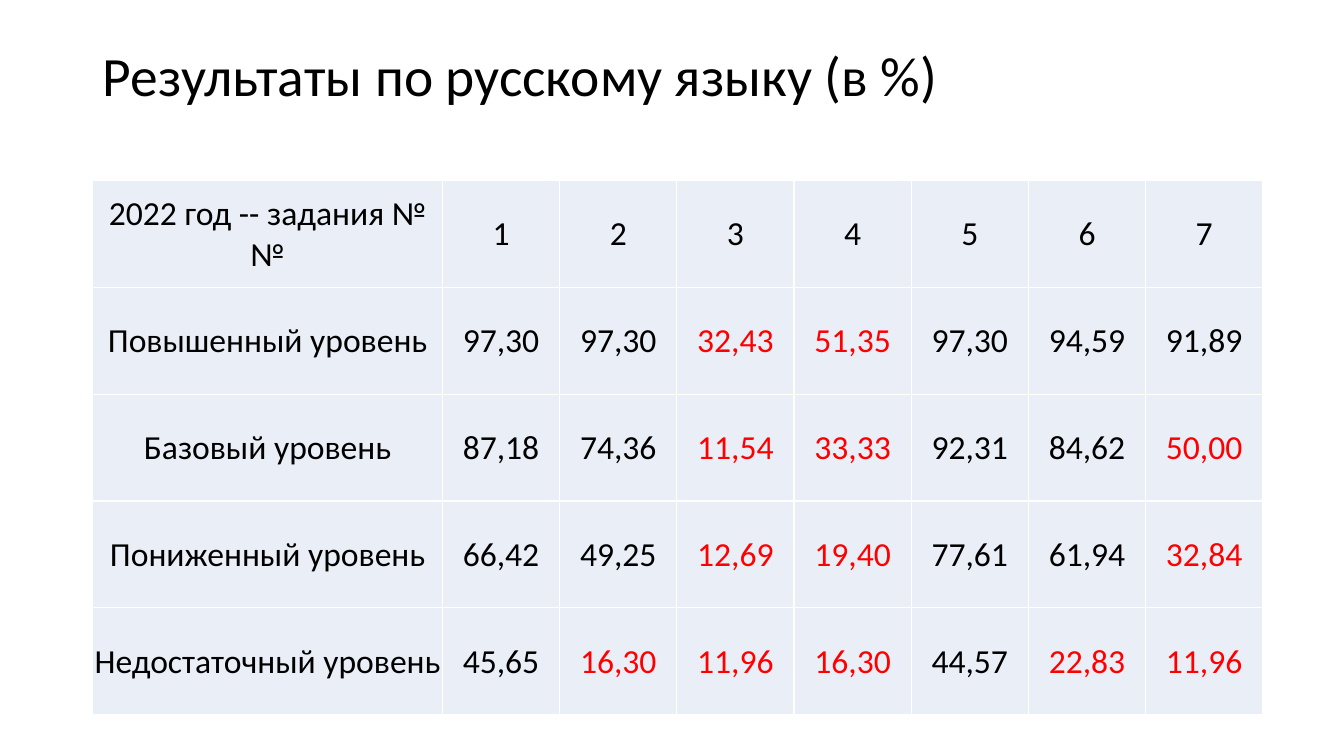
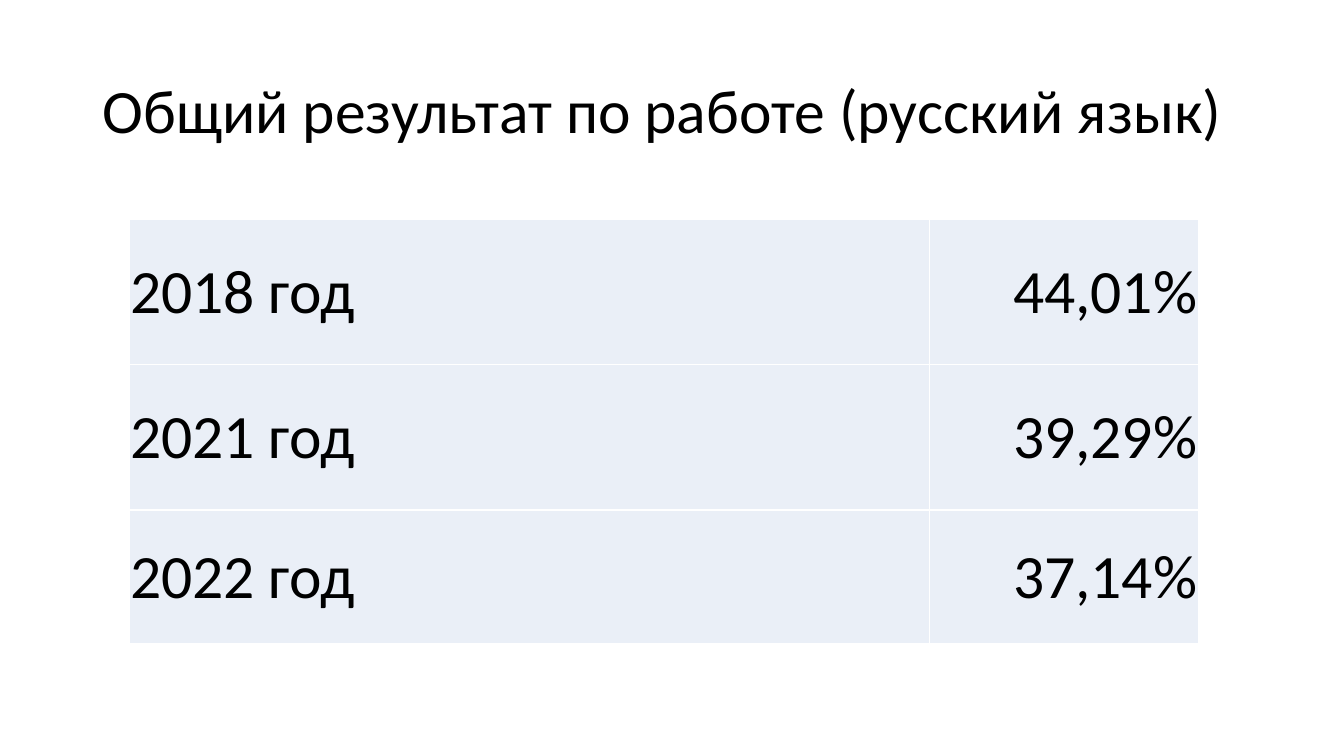
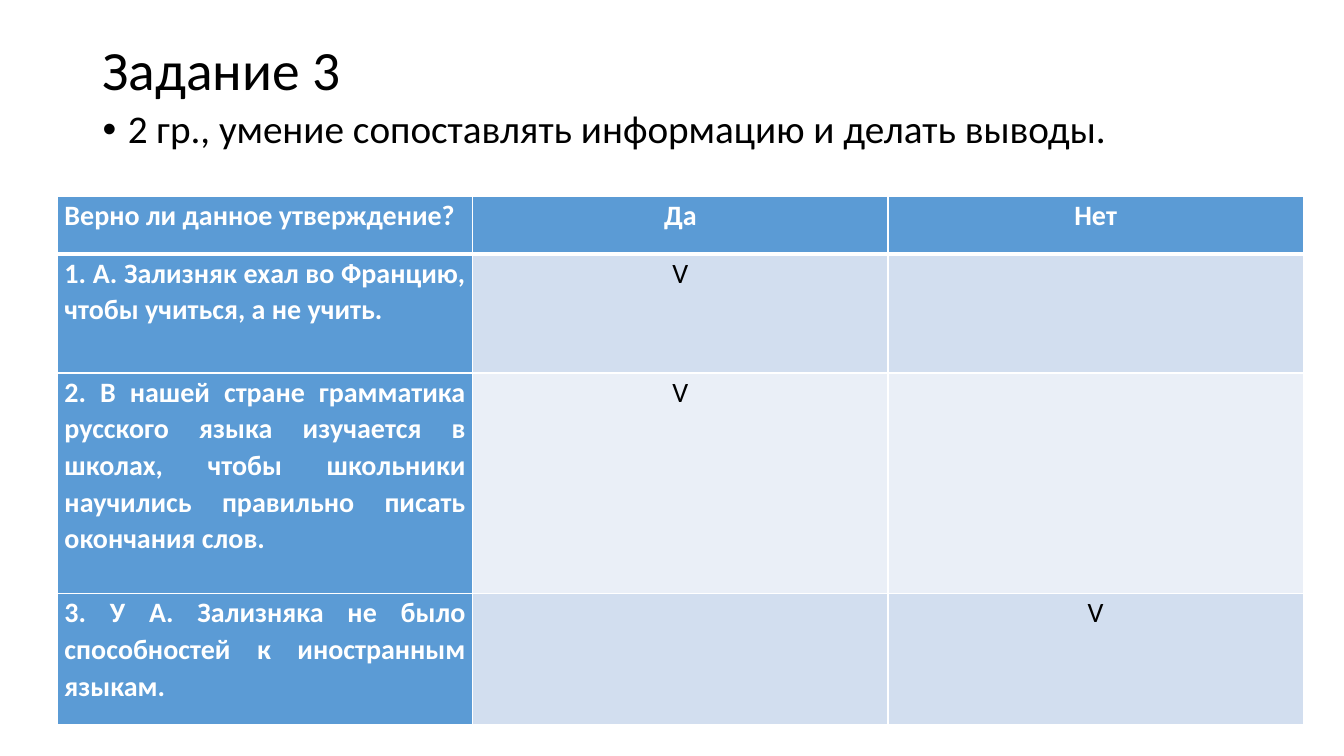
from lxml import etree
from pptx import Presentation
from pptx.dml.color import RGBColor
from pptx.enum.text import MSO_ANCHOR, PP_ALIGN
from pptx.oxml.ns import qn
from pptx.util import Pt

EMU_PER_PX = 9144
FONT = "Calibri"
BLACK, WHITE, RED = "000000", "FFFFFF", "FF0000"
BLUE, BAND, PALE = "5B9BD5", "D2DEEF", "EAEFF7"
LEFT, CENTER, RIGHT, JUSTIFY = PP_ALIGN.LEFT, PP_ALIGN.CENTER, PP_ALIGN.RIGHT, PP_ALIGN.JUSTIFY
TOP, MIDDLE = MSO_ANCHOR.TOP, MSO_ANCHOR.MIDDLE
TIGHT_MARGINS = (1, 1, 1, 0)
WIDE_MARGINS = (7, 0, 7, 0)

LEVELS = [
    ("Повышенный уровень", ["97,30", "97,30", "32,43", "51,35", "97,30", "94,59", "91,89"], {3, 4}),
    ("Базовый уровень", ["87,18", "74,36", "11,54", "33,33", "92,31", "84,62", "50,00"], {3, 4, 7}),
    ("Пониженный уровень", ["66,42", "49,25", "12,69", "19,40", "77,61", "61,94", "32,84"], {3, 4, 7}),
    ("Недостаточный уровень", ["45,65", "16,30", "11,96", "16,30", "44,57", "22,83", "11,96"], {2, 3, 4, 6, 7}),
]
YEARS = [("2018 год", "44,01%"), ("2021 год", "39,29%"), ("2022 год", "37,14%")]
STATEMENTS = [
    ("Верно ли данное утверждение?", "Да", "Нет"),
    ("1. А. Зализняк ехал во Францию, чтобы учиться, а не учить.", "V", ""),
    ("2. В нашей стране грамматика русского языка изучается в школах, "
     "чтобы школьники научились правильно писать окончания слов.", "V", ""),
    ("3. У А. Зализняка не было способностей к иностранным языкам.", "", "V"),
]


def px(length):
    return round(length * EMU_PER_PX)


def color(value):
    return RGBColor.from_string(value)


def write(paragraph, text, size, ink=BLACK, bold=False, align=LEFT, spacing=1.0):
    paragraph.alignment = align
    paragraph.line_spacing = spacing
    run = paragraph.add_run()
    run.text = text
    run.font.name = FONT
    run.font.size = Pt(size)
    run.font.bold = bold
    run.font.color.rgb = color(ink)


def add_text(slide, box, text, size, anchor):
    frame = slide.shapes.add_textbox(*map(px, box)).text_frame
    frame.word_wrap = True
    frame.vertical_anchor = anchor
    paragraph = frame.paragraphs[0]
    write(paragraph, text, size, spacing=0.9)
    return paragraph


def add_title(slide, text, height, size=39.6):
    add_text(slide, (92, 40, 1150, height), text, size, MIDDLE)


def add_bullet_line(slide, box, text):
    paragraph = add_text(slide, box, text, 28, TOP)
    paragraph.space_before = Pt(10)
    properties = paragraph._p.get_or_add_pPr()
    properties.set("marL", str(px(25)))
    properties.set("indent", str(px(-25)))
    etree.SubElement(properties, qn("a:buFont"), typeface="Arial")
    etree.SubElement(properties, qn("a:buChar"), char="•")


def add_border(cell, side, width):
    line = etree.SubElement(cell._tc.get_or_add_tcPr(), qn("a:ln" + side), w=str(Pt(width)))
    fill = etree.SubElement(line, qn("a:solidFill"))
    etree.SubElement(fill, qn("a:srgbClr"), val=WHITE)


def add_grid(slide, left, top, width, first_width, row_heights, column_count):
    """Add a plain table whose columns after the first share the remaining width."""
    frame = slide.shapes.add_table(len(row_heights), column_count, px(left), px(top),
                                   px(width), px(sum(row_heights)))
    table = frame.table
    table.first_row = table.horz_banding = False
    for index, column in enumerate(table.columns):
        column.width = px((width - first_width) / (column_count - 1) if index else first_width)
    for row, height in zip(table.rows, row_heights):
        row.height = px(height)
    return table


def fill_cell(cell, text, size, fill, margins, anchor=MIDDLE, top_line=1, bottom_line=1, **style):
    for side, width in (("L", 1), ("R", 1), ("T", top_line), ("B", bottom_line)):
        add_border(cell, side, width)
    cell.fill.solid()
    cell.fill.fore_color.rgb = color(fill)
    cell.vertical_anchor = anchor
    cell.margin_left, cell.margin_top, cell.margin_right, cell.margin_bottom = map(px, margins)
    if text:
        write(cell.text_frame.paragraphs[0], text, size, **style)


def add_levels_table(slide, left, top, width):
    rows = [("2022 год -- задания №№", [str(task) for task in range(1, 8)], set()), *LEVELS]
    table = add_grid(slide, left, top, width, 347, [106] * len(rows), 8)
    for row, (label, values, weak_tasks) in enumerate(rows):
        for column, text in enumerate([label, *values]):
            fill_cell(table.cell(row, column), text, 24, PALE, TIGHT_MARGINS, align=CENTER,
                      ink=RED if column in weak_tasks else BLACK)


def add_years_table(slide, left, top, width):
    table = add_grid(slide, left, top, width, 794, [144, 144, 133], 2)
    for row, texts in enumerate(YEARS):
        for column, (text, align) in enumerate(zip(texts, (LEFT, RIGHT))):
            fill_cell(table.cell(row, column), text, 44, PALE, TIGHT_MARGINS, align=align)


def add_statements_table(slide, left, top, width):
    table = add_grid(slide, left, top, width, width / 3, [57, 118, 219, 130], 3)
    for row, texts in enumerate(STATEMENTS):
        for column, text in enumerate(texts):
            heading = row == 0 or column == 0
            band = BAND if row % 2 else PALE
            fill_cell(table.cell(row, column), text, 20, BLUE if heading else band,
                      WIDE_MARGINS, TOP,
                      top_line=3 if row == 1 else 1, bottom_line=3 if row == 0 else 1,
                      ink=WHITE if heading else BLACK, bold=heading,
                      align=CENTER if column else JUSTIFY, spacing=1.07)


def build_levels_slide(slide):
    add_title(slide, "Результаты по русскому языку (в %)", 76)
    add_levels_table(slide, 92, 179, 1161)


def build_years_slide(slide):
    add_title(slide, "Общий результат по работе (русский язык)", 145, 44)
    add_years_table(slide, 128, 218, 1061)


def build_statements_slide(slide):
    add_title(slide, "Задание 3", 64)
    add_bullet_line(slide, (92, 104, 1200, 572),
                    "2 гр., умение сопоставлять информацию и делать выводы.")
    add_statements_table(slide, 57, 195, 1236)


def main():
    presentation = Presentation()
    presentation.slide_width, presentation.slide_height = px(1333.33), px(750)
    blank_layout = presentation.slide_layouts[6]
    for build in (build_levels_slide, build_years_slide, build_statements_slide):
        build(presentation.slides.add_slide(blank_layout))
    presentation.save("out.pptx")


if __name__ == "__main__":
    main()
